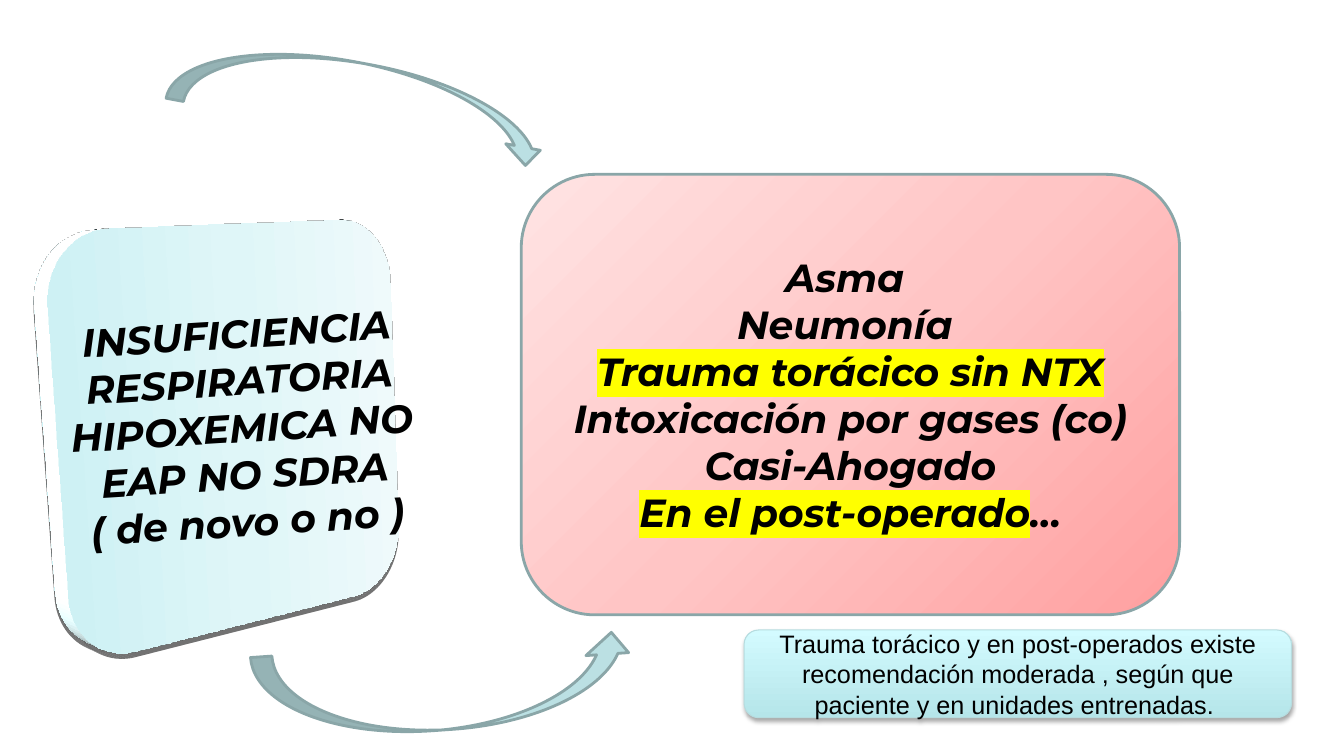
"""Build the slide on hypoxemic respiratory failure and its indications."""
from dataclasses import dataclass

from lxml.etree import SubElement
from pptx import Presentation
from pptx.dml.color import RGBColor
from pptx.enum.shapes import MSO_SHAPE
from pptx.enum.text import MSO_ANCHOR, PP_ALIGN
from pptx.oxml import parse_xml
from pptx.oxml.ns import nsdecls, qn
from pptx.util import Pt

EMU_PER_PX = 9144


@dataclass(frozen=True)
class Theme:
    """Colours, fonts and type sizes of the slide."""
    ink: str = "000000"
    marker: str = "FFFF00"
    outline: str = "8AA6A8"
    arrow: str = "BBE0E3"
    note_outline: str = "B6DCDF"
    rim: str = "FFFFFF"
    cause: tuple = ((0, "CEF1F4"), (50, "DFF6F8"), (100, "EFFAFB"))
    cases: tuple = ((0, "FFA0A0"), (50, "FFC5C5"), (100, "FFE3E3"))
    note: tuple = ((0, "B5E5E9"), (100, "D3FBFF"))
    heading_font: str = "Montserrat"
    heading_size: int = 28
    note_font: str = "Arial"
    note_size: int = 18


class SlideBuilder:
    """Draws styled elements on one slide."""

    def __init__(self, slide, theme):
        """Keep the slide and its theme."""
        self.slide = slide
        self.theme = theme

    def shape(self, kind, place, fill, line=None, line_width=2):
        """Add a preset shape with a plain fill and an optional outline."""
        shape = self.slide.shapes.add_shape(kind, *(px * EMU_PER_PX for px in place))
        shape.shadow.inherit = False
        shape.fill.solid()
        shape.fill.fore_color.rgb = RGBColor.from_string(fill)
        if line:
            shape.line.color.rgb = RGBColor.from_string(line)
            shape.line.width = Pt(line_width)
        else:
            shape.line.fill.background()
        return shape

    def box(self, place, stops, direction, **outline):
        """Add a rounded box with a gradient fill."""
        box = self.shape(MSO_SHAPE.ROUNDED_RECTANGLE, place, stops[0][1], **outline)
        colours = "".join(
            f'<a:gs pos="{position * 1000}"><a:srgbClr val="{colour}"/></a:gs>'
            for position, colour in stops)
        gradient = parse_xml(f'<a:gradFill {nsdecls("a")} rotWithShape="1">'
                             f'<a:gsLst>{colours}</a:gsLst>{direction}</a:gradFill>')
        properties = box.element.spPr
        properties.replace(properties.find(qn("a:solidFill")), gradient)
        return box

    def shadow(self, box, **settings):
        """Give a box an outer shadow."""
        alpha = settings.pop("alpha")
        effects = box.element.spPr.find(qn("a:effectLst"))
        outer = SubElement(effects, qn("a:outerShdw"),
                           {name: str(value) for name, value in settings.items()})
        colour = SubElement(outer, qn("a:srgbClr"), val=self.theme.ink)
        SubElement(colour, qn("a:alpha"), val=str(alpha * 1000))

    def perspective(self, box):
        """Turn a box in space and give it depth."""
        scene = (f'<a:scene3d {nsdecls("a")}><a:camera prst="perspectiveFront" fov="3300000">'
                 '<a:rot lat="486000" lon="19530000" rev="174000"/></a:camera>'
                 '<a:lightRig rig="harsh" dir="t"><a:rot lat="0" lon="0" rev="3000000"/>'
                 '</a:lightRig></a:scene3d>')
        depth = (f'<a:sp3d {nsdecls("a")} extrusionH="254000" contourW="19050">'
                 '<a:bevelT w="82550" h="44450" prst="angle"/>'
                 '<a:bevelB w="82550" h="44450" prst="angle"/>'
                 f'<a:contourClr><a:srgbClr val="{self.theme.rim}"/></a:contourClr></a:sp3d>')
        for part in (scene, depth):
            box.element.spPr.append(parse_xml(part))

    def text(self, box, lines, **font):
        """Write centred lines, each a list of (text, marked) spans."""
        frame = box.text_frame
        frame.word_wrap = True
        frame.vertical_anchor = MSO_ANCHOR.MIDDLE
        for index, line in enumerate(lines):
            para = frame.add_paragraph() if index else frame.paragraphs[0]
            para.alignment = PP_ALIGN.CENTER
            for words, marked in line:
                span = para.add_run()
                span.text = words
                for name, value in font.items():
                    setattr(span.font, name, value)
                span.font.color.rgb = RGBColor.from_string(self.theme.ink)
                if marked:
                    self.highlight(span)

    def highlight(self, span):
        """Mark a span with the marker colour."""
        mark = parse_xml(f'<a:highlight {nsdecls("a")}>'
                         f'<a:srgbClr val="{self.theme.marker}"/></a:highlight>')
        span.font.fill.solid()
        span.font.color.rgb = RGBColor.from_string(self.theme.ink)
        span._r.rPr.find(qn("a:solidFill")).addnext(mark)

    def arrow(self, place, rotation, flipped=False):
        """Add a curved arrow, mirrored top to bottom when flipped."""
        arrow = self.shape(MSO_SHAPE.CURVED_DOWN_ARROW, place,
                           self.theme.arrow, self.theme.outline)
        arrow.rotation = rotation
        if flipped:
            arrow.element.spPr.find(qn("a:xfrm")).set("flipV", "1")


def main():
    """Build and save the deck."""
    deck = Presentation()
    deck.slide_width, deck.slide_height = 1333 * EMU_PER_PX, 750 * EMU_PER_PX
    theme = Theme()
    page = SlideBuilder(deck.slides.add_slide(deck.slide_layouts[6]), theme)
    heading = {"name": theme.heading_font, "size": Pt(theme.heading_size),
               "bold": True, "italic": True}

    cause = page.box((38, 224, 404, 399), theme.cause, '<a:lin ang="0" scaled="1"/>')
    page.shadow(cause, blurRad=225425, dist=50800, dir=5220000, algn="ctr", alpha=33)
    page.perspective(cause)
    page.text(cause, [
        [("INSUFICIENCIA RESPIRATORIA HIPOXEMICA NO EAP NO SDRA", False)],
        [("( de novo o no )", False)],
    ], **heading)

    corner = ('<a:path path="circle"><a:fillToRect l="100000" t="100000"/></a:path>'
              '<a:tileRect r="-100000" b="-100000"/>')
    cases = page.box((517, 173, 653, 437), theme.cases, corner, line=theme.outline)
    page.text(cases, [
        [("Asma ", False)],
        [("Neumonía ", False)],
        [("Trauma torácico sin NTX", True)],
        [("Intoxicación por gases (co)", False)],
        [("Casi-Ahogado", False)],
        [("En el post-operado", True), ("…", False)],
    ], **heading)

    page.arrow((168, 63, 380, 70), 10.6)
    page.arrow((251, 639, 380, 85), 356, flipped=True)

    note = page.box((738, 625, 543, 87), theme.note, '<a:lin ang="16200000" scaled="0"/>',
                    line=theme.note_outline, line_width=0.75)
    page.shadow(note, blurRad=40000, dist=23000, dir=5400000, rotWithShape=0, alpha=35)
    page.text(note, [[("Trauma torácico y en post-operados existe recomendación moderada , "
                       "según que paciente y en unidades entrenadas. ", False)]],
              name=theme.note_font, size=Pt(theme.note_size))

    deck.save("out.pptx")


if __name__ == "__main__":
    main()
